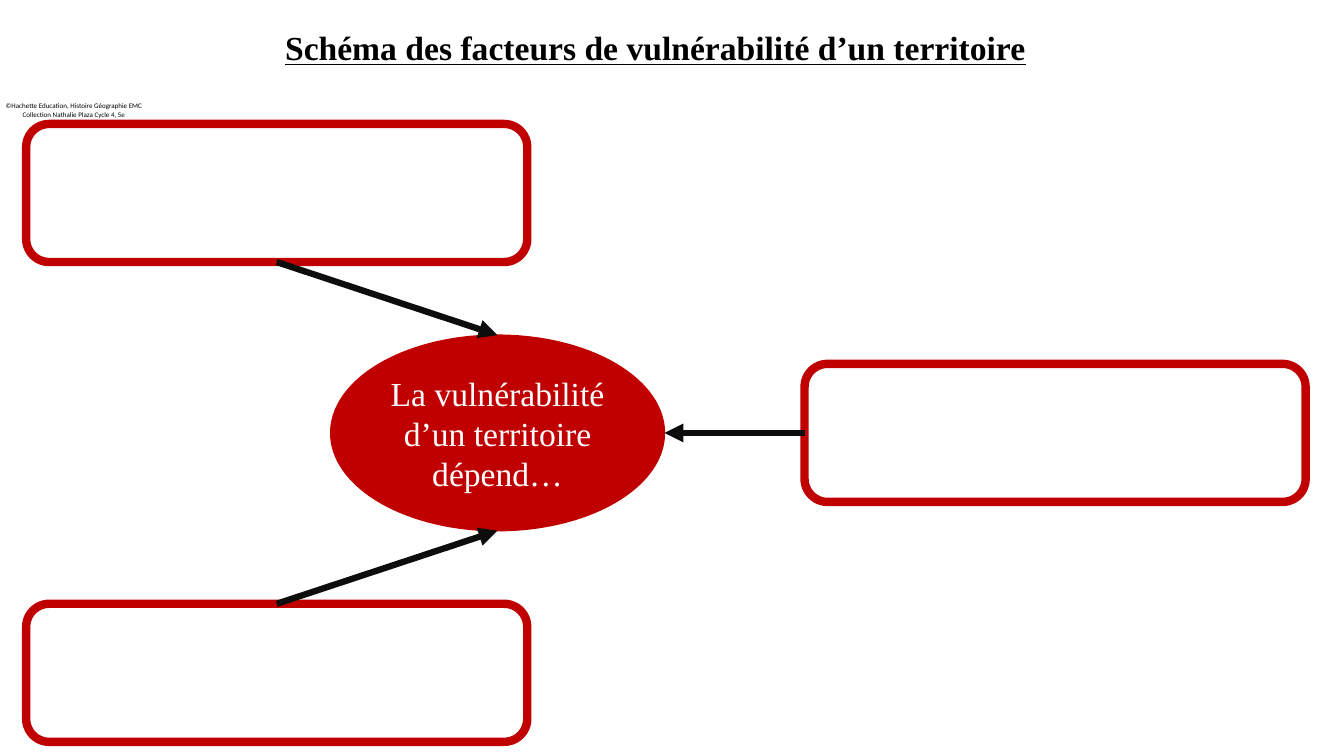
from lxml import etree
from pptx import Presentation
from pptx.dml.color import RGBColor
from pptx.enum.shapes import MSO_CONNECTOR, MSO_SHAPE
from pptx.enum.text import MSO_ANCHOR, PP_ALIGN
from pptx.oxml.ns import qn
from pptx.util import Inches, Pt

RED, BLACK, INK, WHITE = "C00000", "000000", "0D0D0D", "FFFFFF"
SERIF = "Times New Roman"
BOX_W, BOX_H = 4.97, 1.37


def color(code):
    return RGBColor.from_string(code)


def write(frame, text, size, font, code):
    frame.word_wrap = True
    para = frame.paragraphs[0]
    para.text = text
    para.alignment = PP_ALIGN.CENTER
    para.font.size = Pt(size)
    para.font.name = font
    para.font.color.rgb = color(code)
    return para


def label(slide, box, text, size, font):
    area = slide.shapes.add_textbox(*map(Inches, box))
    return write(area.text_frame, text, size, font, BLACK)


def outline(slide, kind, box, width):
    shape = slide.shapes.add_shape(kind, *map(Inches, box))
    shape.shadow.inherit = False
    shape.fill.background()
    shape.line.color.rgb = color(RED)
    shape.line.width = Pt(width)
    return shape


def center(slide, box, text):
    oval = outline(slide, MSO_SHAPE.OVAL, box, 1)
    oval.fill.solid()
    oval.fill.fore_color.rgb = color(RED)
    oval.text_frame.vertical_anchor = MSO_ANCHOR.MIDDLE
    write(oval.text_frame, text, 24, SERIF, WHITE)


def arrow(slide, start, end):
    line = slide.shapes.add_connector(
        MSO_CONNECTOR.STRAIGHT, *map(Inches, (*start, *end)))
    line.line.color.rgb = color(INK)
    line.line.width = Pt(4.5)
    etree.SubElement(line.line._get_or_add_ln(), qn("a:tailEnd"), type="triangle")
    etree.SubElement(line._element.spPr, qn("a:effectLst"))


def diagram(slide, box):
    """Central oval with three empty factor boxes pointing at it."""
    left, top, width, height = box
    right, low = left + width - BOX_W, top + height - BOX_H
    mid = top + height / 2
    oval_x, oval_w, oval_h = left + 3.02, 3.31, 1.94
    oval_y = mid - oval_h / 2
    center(slide, (oval_x, oval_y, oval_w, oval_h),
           "La vulnérabilité d’un territoire dépend…")

    for x, y in ((left, top), (left, low), (right, mid - BOX_H / 2)):
        outline(slide, MSO_SHAPE.ROUNDED_RECTANGLE, (x, y, BOX_W, BOX_H), 6)

    box_x, axis = left + BOX_W / 2, oval_x + oval_w / 2
    arrow(slide, (box_x, top + BOX_H), (axis, oval_y))
    arrow(slide, (box_x, low), (axis, oval_y + oval_h))
    arrow(slide, (right, mid), (oval_x + oval_w, mid))


def main():
    deck = Presentation()
    deck.slide_width, deck.slide_height = Inches(13.33), Inches(7.5)
    slide = deck.slides.add_slide(deck.slide_layouts[6])
    title = label(slide, (2.03, 0.22, 8.94, 0.5),
                  "Schéma des facteurs de vulnérabilité d’un territoire", 24, SERIF)
    title.font.bold = title.font.underline = True
    diagram(slide, (0.26, 1.23, 12.69, 6.13))
    label(slide, (-0.08, 0.96, 1.63, 0.27),
          "©Hachette Education, Histoire Géographie EMC Collection Nathalie Plaza Cycle 4, 5e",
          5, "Calibri")
    deck.save("out.pptx")


if __name__ == "__main__":
    main()
